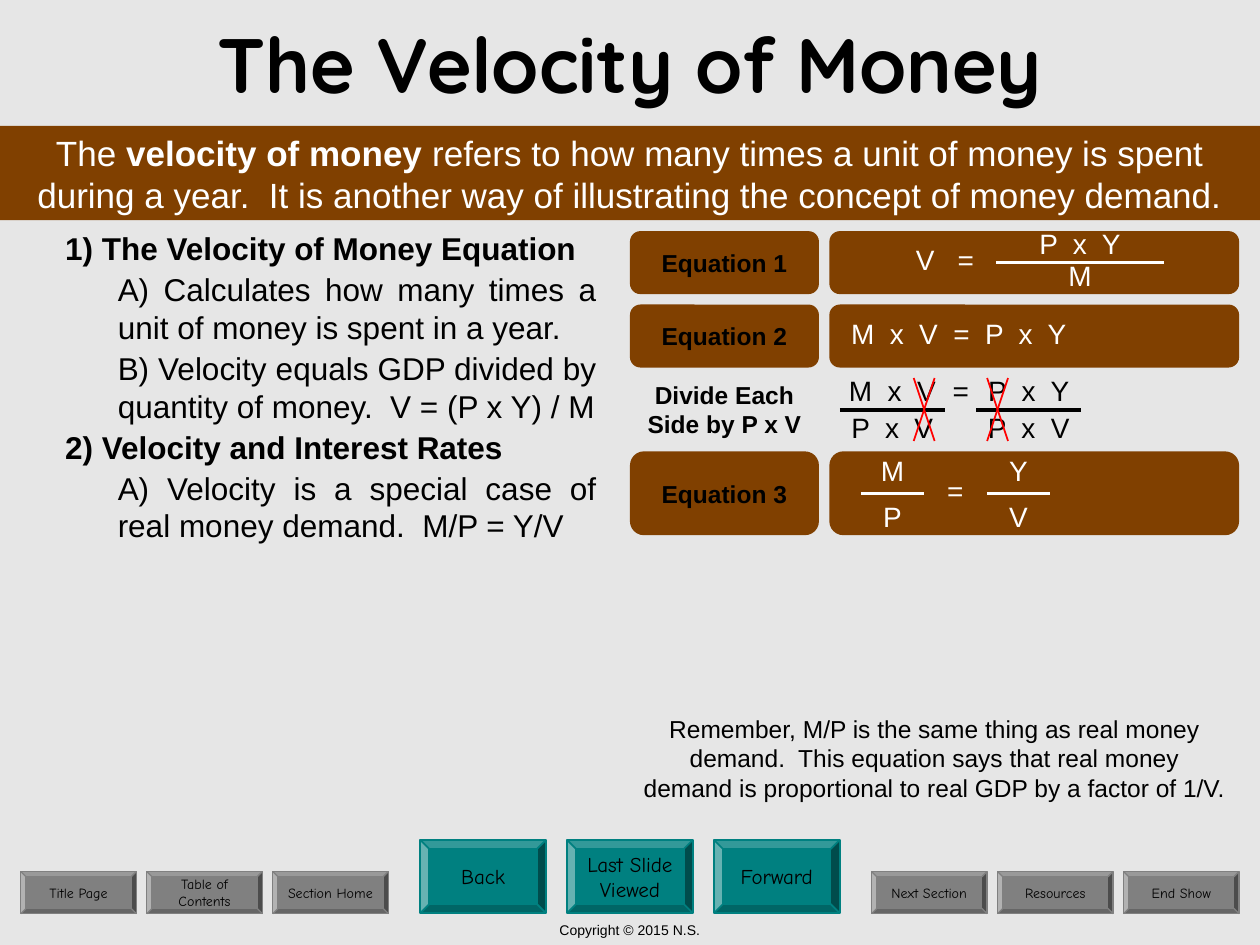
from dataclasses import dataclass
from typing import Optional

from lxml import etree
from pptx import Presentation
from pptx import util as u
from pptx.dml.color import RGBColor
from pptx.enum import shapes, text
from pptx.oxml.ns import qn


@dataclass(frozen=True)
class Theme:
    back: str = "E6E6E6"
    ink: str = "000000"
    light: str = "FFFFFF"
    brown: str = "804000"
    teal: str = "008080"
    gray: str = "808080"
    strike: str = "FF0000"
    body_font: str = "Arial"
    title_font: str = "Quicksand"
    button_font: str = "Comic Neue"
    title: int = 44
    band: int = 20
    outline: int = 18
    math: int = 16
    label: int = 14
    button: int = 12
    small: int = 8


T = Theme()


@dataclass(frozen=True)
class Box:
    x: float
    y: float
    w: float
    h: float

    def emu(self) -> tuple:
        return u.Cm(self.x), u.Cm(self.y), u.Cm(self.w), u.Cm(self.h)


@dataclass(frozen=True)
class Style:
    size: int
    color: str
    font: str = T.body_font
    bold: bool = False


@dataclass(frozen=True)
class Fraction:
    center: float
    top_y: float
    bar_y: float
    bottom_y: float
    bar_w: float
    top: str
    bottom: str
    color: str


@dataclass(frozen=True)
class Term:
    words: str
    center: float
    y: float
    color: str
    width: float = 2.54


@dataclass(frozen=True)
class ButtonRow:
    labels: tuple
    first: Box
    step: float
    color: str
    line: float
    size: int


ROW_Y, ROW_STEP, ROW_H, LAST_H = 4.66, 1.48, 1.27, 1.69
LABEL_X, LABEL_W, PANEL_X, PANEL_W = 12.7, 3.81, 16.72, 8.26
OUTLINE = (
    (0, "1) The Velocity of Money Equation"),
    (1, "A) Calculates how many times a unit of money is spent in a year."),
    (1, "B) Velocity equals GDP divided by quantity of money.  V = (P x Y) / M"),
    (0, "2) Velocity and Interest Rates"),
    (1, "A) Velocity is a special case of real money demand.  M/P = Y/V"),
)
ROWS = (
    ("Equation 1", ROW_H, True),
    ("Equation 2", ROW_H, True),
    ("Divide Each\nSide by P x V", ROW_H, False),
    ("Equation 3", LAST_H, True),
)
FRACTIONS = (
    Fraction(21.77, 4.44, 5.29, 5.08, 3.39, "P  x  Y", "M", T.light),
    Fraction(17.99, 7.41, 8.26, 8.15, 2.12, "M  x  V", "P  x  V", T.ink),
    Fraction(20.74, 7.41, 8.26, 8.15, 2.12, "P  x  Y", "P  x  V", T.ink),
    Fraction(17.99, 9.01, 9.95, 9.95, 1.27, "M", "P", T.light),
    Fraction(20.53, 9.01, 9.95, 9.95, 1.27, "Y", "V", T.light),
)
TERMS = (
    Term("V   =", 19.05, 4.77, T.light),
    Term("M  x  V  =  P  x  Y", 19.33, 6.25, T.light, 4.9),
    Term("=", 19.37, 7.41, T.ink),
    Term("=", 19.26, 9.42, T.light),
)
BUTTONS = (
    ButtonRow(("Title Page", "Table of\nContents", "Section Home"),
              Box(0.42, 17.57, 2.33, 0.85), 2.54, T.gray, 0.75, T.small),
    ButtonRow(("Back", "Last Slide\nViewed", "Forward"),
              Box(8.47, 16.93, 2.54, 1.48), 2.96, T.teal, 1, T.button),
    ButtonRow(("Next Section", "Resources", "End Show"),
              Box(17.57, 17.57, 2.33, 0.85), 2.54, T.gray, 0.75, T.small),
)


def add_run(p, words: str, style: Style) -> None:
    r = p.add_run()
    r.text = words
    r.font.name = style.font
    r.font.size = u.Pt(style.size)
    r.font.bold = style.bold
    r.font.color.rgb = RGBColor.from_string(style.color)


def write(tf, words: str, style: Style) -> None:
    for i, line in enumerate(words.split("\n")):
        p = tf.add_paragraph() if i else tf.paragraphs[0]
        p.alignment = text.PP_ALIGN.CENTER
        add_run(p, line, style)


def add_text(s, box: Box, words: str, style: Style) -> None:
    tf = s.shapes.add_textbox(*box.emu()).text_frame
    tf.word_wrap = True
    tf.auto_size = text.MSO_AUTO_SIZE.SHAPE_TO_FIT_TEXT
    write(tf, words, style)


def add_block(s, kind, box: Box, fill: Optional[str], wrap: bool = False):
    sp = s.shapes.add_shape(kind, *box.emu())
    sp.shadow.inherit = False
    sp.line.fill.background()
    if fill:
        sp.fill.solid()
        sp.fill.fore_color.rgb = RGBColor.from_string(fill)
    else:
        sp.fill.background()
    sp.text_frame.word_wrap = wrap
    sp.text_frame.vertical_anchor = text.MSO_ANCHOR.MIDDLE
    return sp


def add_line(s, x1: float, y1: float, x2: float, y2: float, color: str, width: float) -> None:
    c = s.shapes.add_connector(shapes.MSO_CONNECTOR.STRAIGHT,
                               u.Cm(x1), u.Cm(y1), u.Cm(x2), u.Cm(y2))
    c.line.color.rgb = RGBColor.from_string(color)
    c.line.width = u.Pt(width)
    etree.SubElement(c._element.spPr, qn("a:effectLst"))


def add_term(s, term: Term) -> None:
    add_text(s, Box(term.center - term.width / 2, term.y, term.width, 0.94),
             term.words, Style(T.math, term.color))


def add_fraction(s, f: Fraction) -> None:
    add_term(s, Term(f.top, f.center, f.top_y, f.color))
    add_term(s, Term(f.bottom, f.center, f.bottom_y, f.color))
    half = f.bar_w / 2
    add_line(s, f.center - half, f.bar_y, f.center + half, f.bar_y, f.color, 2)


def add_buttons(s, row: ButtonRow) -> None:
    b = row.first
    for i, label in enumerate(row.labels):
        sp = add_block(s, shapes.MSO_SHAPE.BEVEL, Box(b.x + i * row.step, b.y, b.w, b.h), row.color)
        sp.adjustments[0] = 0.125
        sp.line.color.rgb = RGBColor.from_string(row.color)
        sp.line.width = u.Pt(row.line)
        write(sp.text_frame, label, Style(row.size, T.ink, T.button_font))


def place(sp, box: Box) -> None:
    sp.left, sp.top, sp.width, sp.height = box.emu()


def add_outline(sp) -> None:
    place(sp, Box(1.06, 4.49, 11.22, 6.61))
    tf = sp.text_frame
    tf.auto_size = text.MSO_AUTO_SIZE.NONE
    for i, (level, words) in enumerate(OUTLINE):
        p = tf.add_paragraph() if i else tf.paragraphs[0]
        p.level = level
        p.alignment = text.PP_ALIGN.JUSTIFY
        p.space_before = u.Pt(1.8 if i else 0)
        pPr = p._p.get_or_add_pPr()
        pPr.set("marL", str(u.Cm(1.06 * level)))
        pPr.set("indent", "0")
        etree.SubElement(pPr, qn("a:buNone"))
        add_run(p, words, Style(T.outline, T.ink, bold=level == 0))


def main() -> None:
    prs = Presentation()
    prs.slide_width, prs.slide_height = u.Cm(25.4), u.Cm(19.05)
    s = prs.slides.add_slide(prs.slide_layouts[1])
    s.background.fill.solid()
    s.background.fill.fore_color.rgb = RGBColor.from_string(T.back)

    title, body = s.placeholders
    place(title, Box(0, 0, 25.4, 2.54))
    title.text_frame.vertical_anchor = text.MSO_ANCHOR.MIDDLE
    write(title.text_frame, "The Velocity of Money", Style(T.title, T.ink, T.title_font, True))
    add_outline(body)

    band = add_block(s, shapes.MSO_SHAPE.RECTANGLE, Box(0, 2.54, 25.4, 1.9), T.brown, wrap=True)
    p = band.text_frame.paragraphs[0]
    p.alignment = text.PP_ALIGN.CENTER
    add_run(p, "The ", Style(T.band, T.light))
    add_run(p, "velocity of money ", Style(T.band, T.light, bold=True))
    add_run(p, "refers to how many times a unit of money is spent during a year.  "
               "It is another way of illustrating the concept of money demand.", Style(T.band, T.light))

    rounded = shapes.MSO_SHAPE.ROUNDED_RECTANGLE
    for i, (label, height, filled) in enumerate(ROWS):
        y = ROW_Y + i * ROW_STEP
        sp = add_block(s, rounded, Box(LABEL_X, y, LABEL_W, height), T.brown if filled else None)
        write(sp.text_frame, label, Style(T.label, T.ink, bold=True))
        if filled:
            add_block(s, rounded, Box(PANEL_X, y, PANEL_W, height), T.brown)
    for fraction in FRACTIONS:
        add_fraction(s, fraction)
    for term in TERMS:
        add_term(s, term)
    for x in (18.42, 19.9):
        add_line(s, x, 8.89, x + 0.42, 7.62, T.strike, 1)
        add_line(s, x + 0.42, 8.89, x, 7.62, T.strike, 1)

    add_text(s, Box(12.7, 14.27, 12.28, 2.06),
             "Remember, M/P is the same thing as real money demand.  This equation says that "
             "real money demand is proportional to real GDP by a factor of 1/V.", Style(T.label, T.ink))
    for row in BUTTONS:
        add_buttons(s, row)
    add_text(s, Box(0, 18.46, 25.4, 0.58), "Copyright © 2015 N.S.", Style(T.small, T.ink))
    prs.save("out.pptx")


if __name__ == "__main__":
    main()
